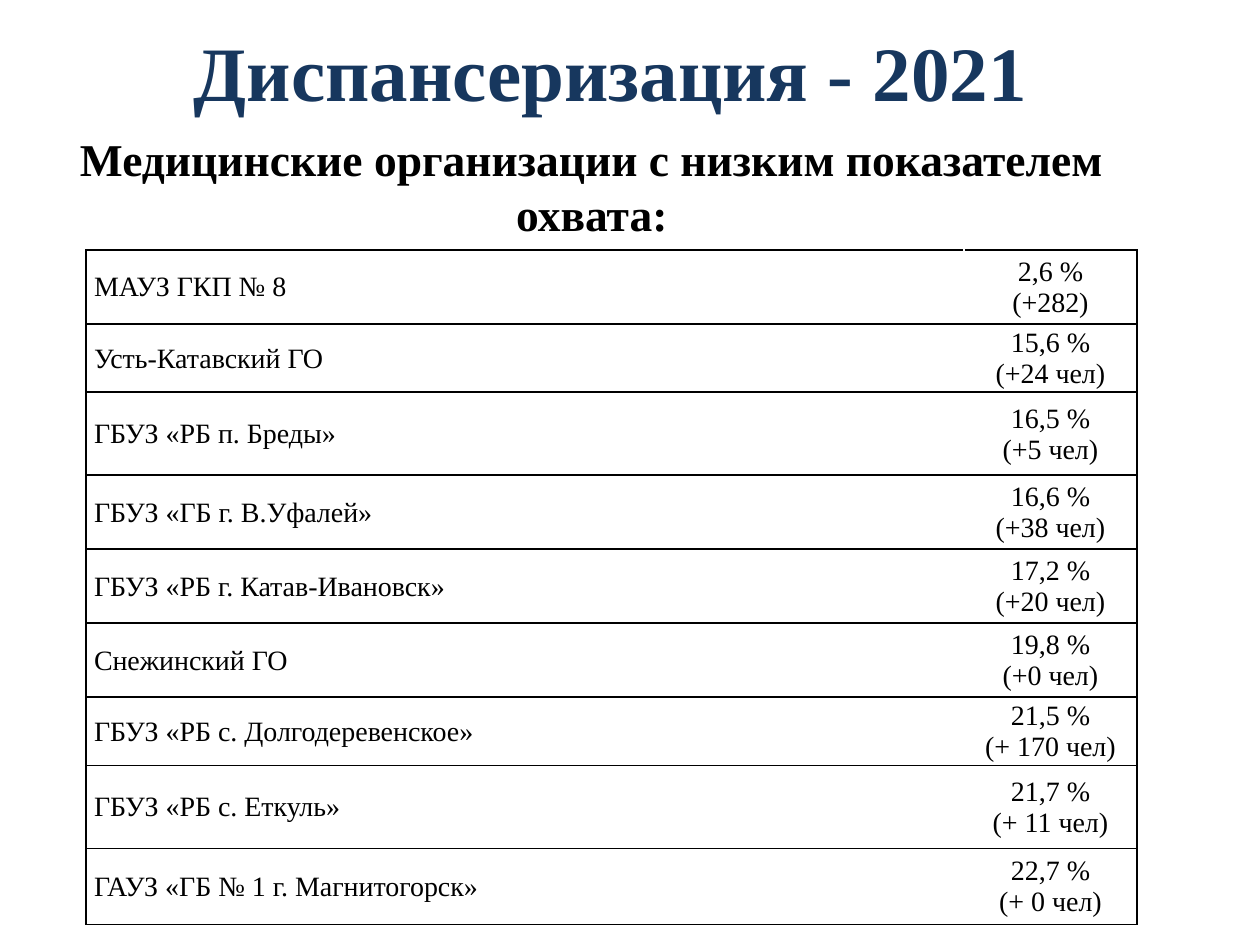
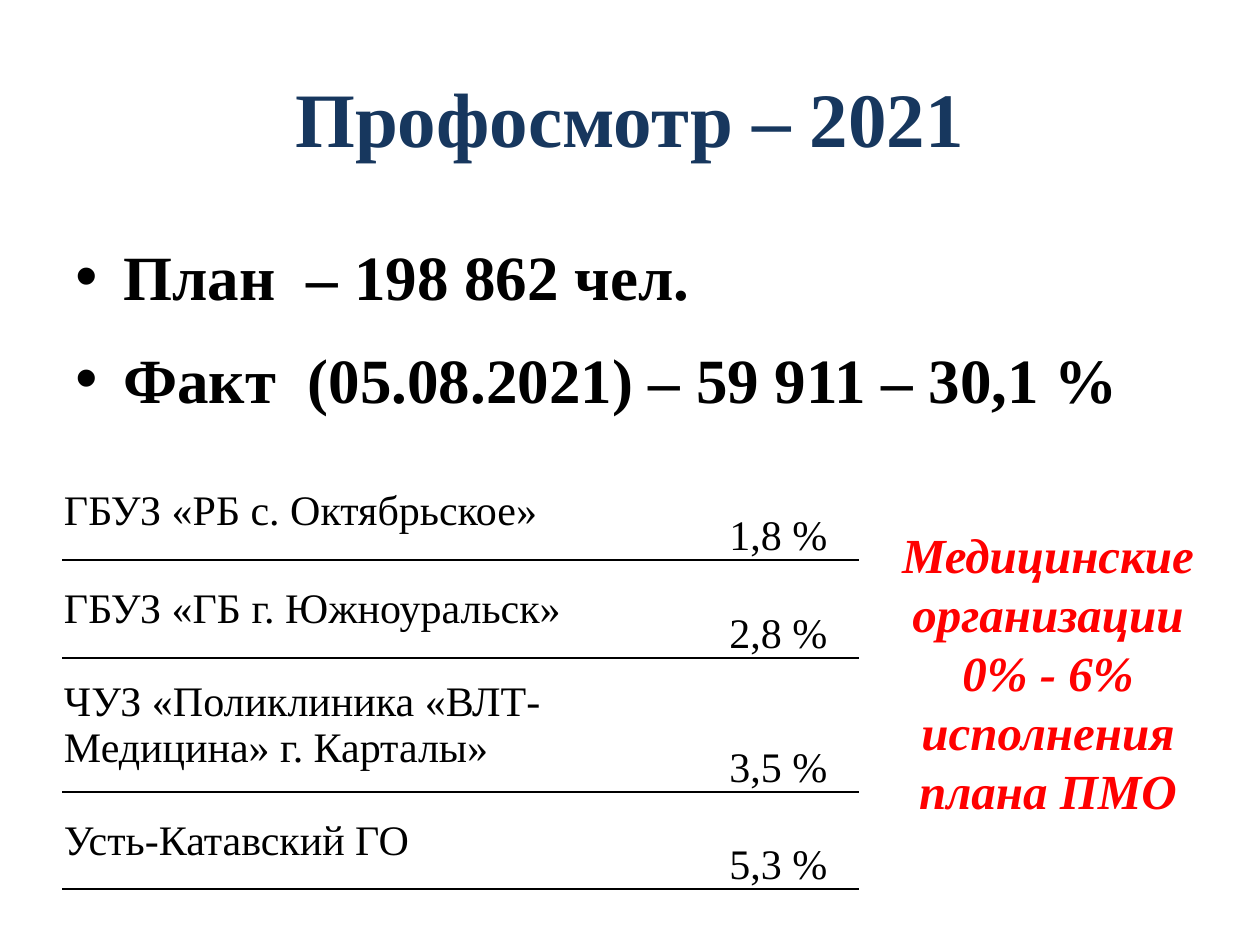
from dataclasses import dataclass
from lxml import etree
from pptx import Presentation
from pptx import util as u
from pptx.dml.color import RGBColor
from pptx.enum import text
from pptx.oxml.ns import qn


@dataclass(frozen=True)
class Theme:
    font: str = "Times New Roman"
    navy: str = "17375E"
    ink: str = "000000"
    red: str = "FF0000"
    white: str = "FFFFFF"
    title: int = 44
    plan: int = 36
    note: int = 28
    sub: int = 26
    large: int = 24
    small: int = 16


T = Theme()
MID, LOW = text.MSO_ANCHOR.MIDDLE, text.MSO_ANCHOR.BOTTOM
LEFT, MIDDLE = text.PP_ALIGN.LEFT, text.PP_ALIGN.CENTER

CHECK = {
    "title": "Диспансеризация - 2021",
    "sub": "Медицинские организации с низким показателем охвата:",
    "rows": [
        ("МАУЗ ГКП № 8", "2,6 %\n(+282)"),
        ("Усть-Катавский ГО", "15,6 %\n(+24 чел)"),
        ("ГБУЗ «РБ п. Бреды»", "16,5 %\n(+5 чел)"),
        ("ГБУЗ «ГБ г. В.Уфалей»", "16,6 %\n(+38 чел)"),
        ("ГБУЗ «РБ г. Катав-Ивановск»", "17,2 %\n(+20 чел)"),
        ("Снежинский ГО", "19,8 %\n(+0 чел)"),
        ("ГБУЗ «РБ с. Долгодеревенское»", "21,5 %\n(+ 170 чел)"),
        ("ГБУЗ «РБ с. Еткуль»", "21,7 %\n(+ 11 чел)"),
        ("ГАУЗ «ГБ № 1 г. Магнитогорск»", "22,7 %\n(+ 0 чел)"),
    ],
    "tall": [74, 67, 83, 74, 74, 74, 67, 83, 76],
}
EXAM = {
    "title": "Профосмотр – 2021",
    "plan": "План  – 198 862 чел.\nФакт  (05.08.2021) – 59 911 – 30,1 %",
    "note": "Медицинские организации\n0% - 6% исполнения плана ПМО",
    "rows": [
        ("ГБУЗ «РБ с. Октябрьское»", "1,8 %"),
        ("ГБУЗ «ГБ г. Южноуральск»", "2,8 %"),
        ("ЧУЗ «Поликлиника «ВЛТ-Медицина» г. Карталы»", "3,5 %"),
        ("Усть-Катавский ГО", "5,3 %"),
    ],
    "tall": [98, 98, 134, 97],
}


def px(n):
    return u.Emu(round(n * 914400 / 126))


def style(frame, size, color=T.ink, bold=False, slant=False, align=MIDDLE):
    for para in frame.paragraphs:
        para.alignment = align
        for run in para.runs:
            font = run.font
            font.name, font.size = T.font, u.Pt(size)
            font.bold, font.italic = bold, slant
            font.color.rgb = RGBColor.from_string(color)


def label(slide, words, box, size, color=T.ink, anchor=text.MSO_ANCHOR.TOP, **look):
    frame = slide.shapes.add_textbox(*map(px, box)).text_frame
    frame.word_wrap = True
    frame.vertical_anchor = anchor
    frame.text = words
    style(frame, size, color, bold=True, **look)
    return frame


def title(slide, words, left, top):
    label(slide, words, (left, top, 1134, 158), T.title, T.navy, MID)


def bullet(para):
    props = para._p.get_or_add_pPr()
    props.set("marL", str(px(48)))
    props.set("indent", str(px(-48)))
    etree.SubElement(props, qn("a:buFont"), typeface="Arial")
    etree.SubElement(props, qn("a:buChar"), char="•")


def edge(cell, colors):
    props = cell._tc.get_or_add_tcPr()
    for i, (side, color) in enumerate(zip("LRTB", colors)):
        line = etree.Element(qn("a:ln" + side), w=str(u.Pt(1)))
        fill = etree.SubElement(line, qn("a:solidFill"))
        etree.SubElement(fill, qn("a:srgbClr"), val=color)
        props.insert(i, line)


def grid(slide, data, spot, wide, size, pad, anchor, side, top):
    rows, tall = data["rows"], data["tall"]
    box = (*spot, sum(wide), sum(tall))
    table = slide.shapes.add_table(len(rows), len(wide), *map(px, box)).table
    table.first_row = table.horz_banding = False
    for col, width in zip(table.columns, wide):
        col.width = px(width)
    for r, (row, height) in enumerate(zip(rows, tall)):
        table.rows[r].height = px(height)
        for c, words in enumerate(row):
            cell = table.cell(r, c)
            cell.text = words
            style(cell.text_frame, size, align=MIDDLE if c else LEFT)
            cell.margin_left = px(1 if c else pad)
            cell.margin_right = cell.margin_top = px(1)
            cell.margin_bottom = 0
            cell.vertical_anchor = anchor if c else MID
            cell.fill.background()
            ends = (T.white, side) if c else (side, T.white)
            edge(cell, (*ends, T.ink if r else top, T.ink))


def main():
    deck = Presentation()
    deck.slide_width, deck.slide_height = px(1260), px(945)
    blank = deck.slide_layouts[6]

    check = deck.slides.add_slide(blank)
    title(check, CHECK["title"], 44, -8)
    sub = label(check, CHECK["sub"], (25, 125, 1134, 128), T.sub)
    sub.paragraphs[0].space_before = u.Pt(6)
    grid(check, CHECK, (86, 250), (878, 173), T.small, 8, MID, T.ink, T.ink)

    exam = deck.slides.add_slide(blank)
    title(exam, EXAM["title"], 63, 38)
    plan = label(exam, EXAM["plan"], (63, 220, 1134, 688), T.plan, align=LEFT)
    for para in plan.paragraphs:
        para.line_spacing = 1.15
        para.space_before = u.Pt(9)
        bullet(para)
    label(exam, EXAM["note"], (878, 503, 340, 338), T.note, T.red, MID, slant=True)
    grid(exam, EXAM, (63, 462), (636, 159), T.large, 1, LOW, T.white, T.white)

    deck.save("out.pptx")


if __name__ == "__main__":
    main()
